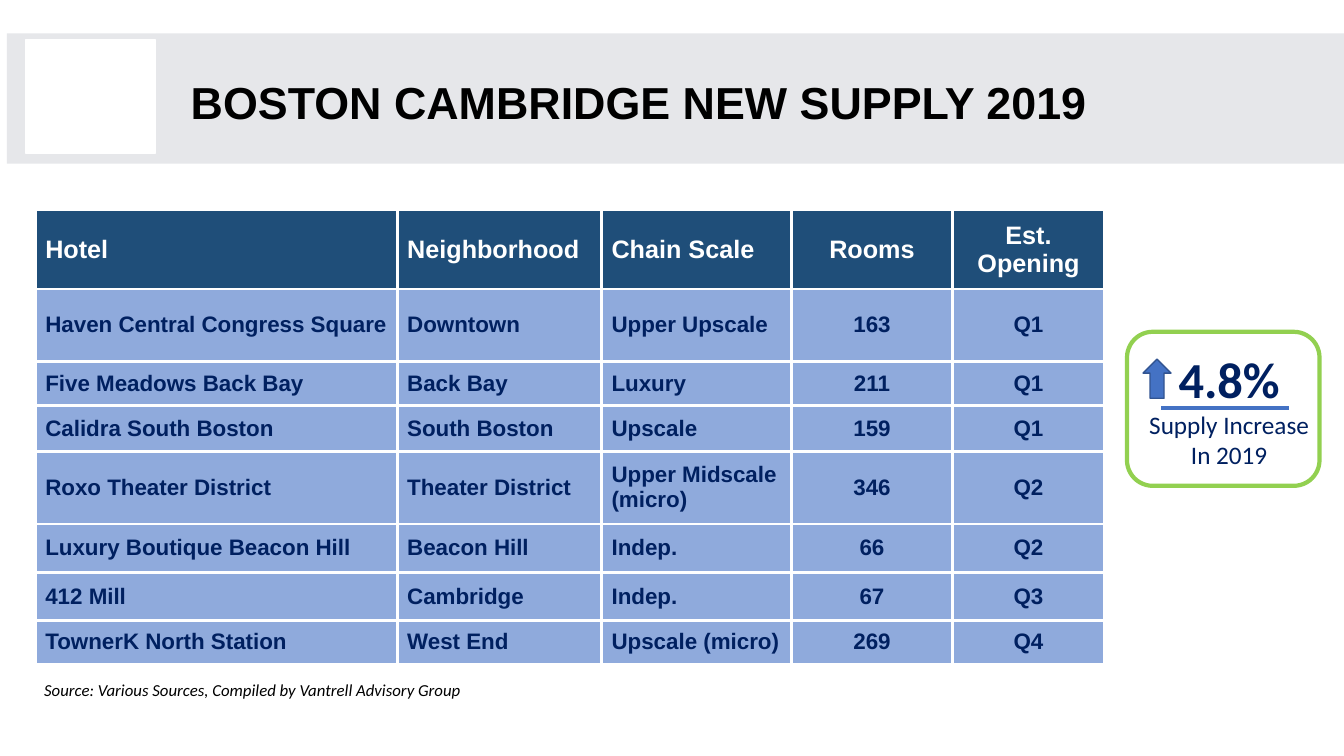
from lxml import etree
from pptx import Presentation, util as u
from pptx.dml.color import RGBColor
from pptx.enum import shapes as es, text as et
from pptx.oxml import ns

# Content
TITLE = "BOSTON CAMBRIDGE NEW SUPPLY 2019"
HOTELS = [
    ("Hotel", "Neighborhood", "Chain Scale", "Rooms", "Est. Opening"),
    ("Haven Central Congress Square", "Downtown", "Upper Upscale", "163", "Q1"),
    ("Five Meadows Back Bay", "Back Bay", "Luxury", "211", "Q1"),
    ("Calidra South Boston", "South Boston", "Upscale", "159", "Q1"),
    ("Roxo Theater District", "Theater District", "Upper Midscale\n(micro)", "346", "Q2"),
    ("Luxury Boutique Beacon Hill", "Beacon Hill", "Indep.", "66", "Q2"),
    ("412 Mill", "Cambridge", "Indep.", "67", "Q3"),
    ("TownerK North Station", "West End", "Upscale (micro)", "269", "Q4"),
]
GROWTH = "4.8%\nSupply Increase\nIn 2019"
SOURCE = "Source: Various Sources, Compiled by Vantrell Advisory Group"

WIDTHS = [258.5, 146, 135.5, 115, 108.7]
HEIGHTS = [56.5, 51.5, 31.8, 32.5, 52, 34.5, 34.5, 31]
NAVY, BLUE, WHITE = "002060", "4472C4", "FFFFFF"
LEFT, MID = et.PP_ALIGN.LEFT, et.PP_ALIGN.CENTER


def hue(code):
    return RGBColor.from_string(code)


def pts(*nums):
    return [u.Pt(n) for n in nums]


def style(para, size, face, code, bold=False, slant=False, align=LEFT):
    para.alignment = align
    for run in para.runs:
        font = run.font
        font.size, font.name, font.color.rgb = u.Pt(size), face, hue(code)
        font.bold, font.italic = bold, slant


def add_box(kind, area, fill=None, line=None, width=1):
    box = slide.shapes.add_shape(kind, *pts(*area))
    box.shadow.inherit = False
    if fill:
        box.fill.solid()
        box.fill.fore_color.rgb = hue(fill)
    else:
        box.fill.background()
    if line:
        box.line.color.rgb, box.line.width = hue(line), u.Pt(width)
    else:
        box.line.fill.background()
    return box


def add_note(area, words):
    frame = slide.shapes.add_textbox(*pts(*area)).text_frame
    frame.word_wrap = True
    frame.text = words
    return frame


def add_edges(cell, code, width):
    props = cell._tc.get_or_add_tcPr()
    for spot, side in enumerate(("a:lnL", "a:lnR", "a:lnT", "a:lnB")):
        edge = etree.Element(ns.qn(side), w=str(u.Pt(width)))
        fill = etree.SubElement(edge, ns.qn("a:solidFill"))
        etree.SubElement(fill, ns.qn("a:srgbClr"), val=code)
        props.insert(spot, edge)


deck = Presentation()
deck.slide_width, deck.slide_height = pts(960, 540)
slide = deck.slides.add_slide(deck.slide_layouts[5])
kinds = es.MSO_SHAPE

# Header band and title
add_box(kinds.RECTANGLE, (5, 23.8, 955, 93), "E6E7EA")
plate = add_box(kinds.RECTANGLE, (18.5, 28.3, 92.3, 81.2), WHITE, WHITE)
title = slide.shapes.title
plate.element.addnext(title.element)
title.left, title.top, title.width, title.height = pts(129, 51.8, 817, 46)
title.text_frame.text = TITLE
title.text_frame.vertical_anchor = et.MSO_ANCHOR.MIDDLE
title.text_frame.paragraphs[0].line_spacing = 0.9
style(title.text_frame.paragraphs[0], 32, "Arial", "000000", bold=True)

# Hotel table
table = slide.shapes.add_table(len(HOTELS), len(WIDTHS), *pts(
    25.4, 150, sum(WIDTHS), sum(HEIGHTS))).table
for col, width in zip(table.columns, WIDTHS):
    col.width = u.Pt(width)
for r, (row, high) in enumerate(zip(HOTELS, HEIGHTS)):
    table.rows[r].height = u.Pt(high)
    fill, size, ink = ("8FAADC", 16, NAVY) if r else ("1F4E79", 18, WHITE)
    for c, words in enumerate(row):
        cell = table.cell(r, c)
        cell.text_frame.text = words
        cell.vertical_anchor = et.MSO_ANCHOR.MIDDLE
        cell.margin_left = cell.margin_right = u.Pt(7)
        cell.margin_top = cell.margin_bottom = u.Pt(5)
        cell.fill.solid()
        cell.fill.fore_color.rgb = hue(fill)
        add_edges(cell, WHITE, 2.25)
        for para in cell.text_frame.paragraphs:
            style(para, size, "Arial", ink, bold=True, align=MID if c > 2 else LEFT)

# Supply growth callout
frame = add_note((798, 237, 160, 110), GROWTH)
frame.vertical_anchor = et.MSO_ANCHOR.MIDDLE
for n, para in enumerate(frame.paragraphs):
    style(para, 18 if n else 36, "Calibri", NAVY, bold=n == 0, align=MID)
add_box(kinds.UP_ARROW, (816.5, 256.5, 20, 28), BLUE, "325491")
rule = slide.shapes.add_connector(es.MSO_CONNECTOR.STRAIGHT, *pts(829.5, 291.2, 921, 291.2))
rule.line.color.rgb, rule.line.width = hue(BLUE), u.Pt(3)
etree.SubElement(rule.element.spPr, ns.qn("a:effectLst"))
add_box(kinds.ROUNDED_RECTANGLE, (805, 237, 137.5, 110), line="92D050", width=3)

# Source line
frame = add_note((24.5, 481.7, 376, 21.6), SOURCE)
style(frame.paragraphs[0], 12, "Calibri", "000000", slant=True)

deck.save("out.pptx")
